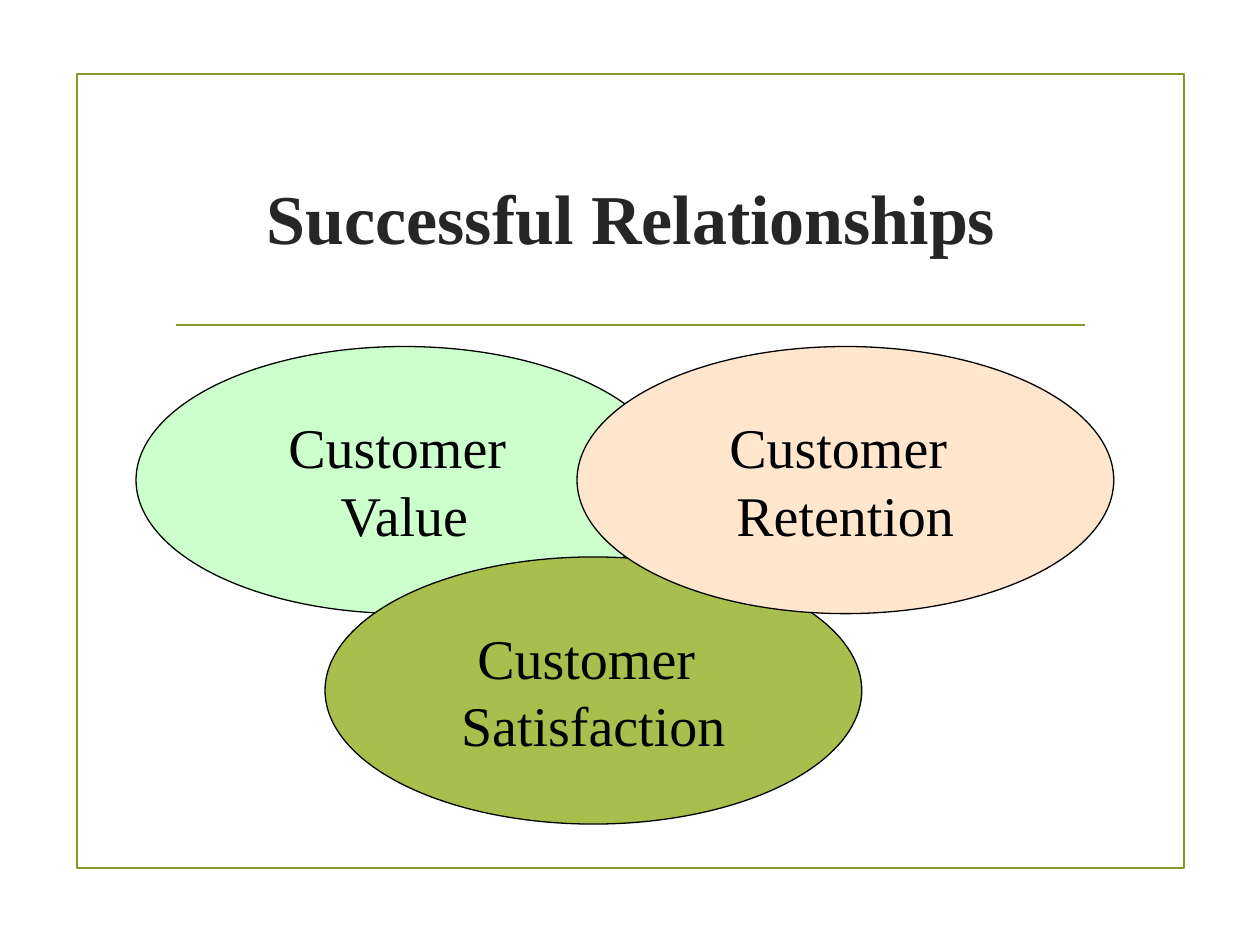
import dataclasses

import pptx
import pptx.dml.color
import pptx.enum.shapes
import pptx.enum.text
import pptx.util
from lxml import etree

SHAPE = pptx.enum.shapes.MSO_SHAPE


@dataclasses.dataclass(frozen=True)
class Theme:
    font: str = "Times New Roman"
    paper: str = "FFFFFF"
    accent: str = "83992A"
    ink: str = "000000"
    heading: str = "262626"
    value: str = "CCFFCC"
    satisfaction: str = "A8BF4D"
    retention: str = "FFE6CD"
    title_size: int = 40
    label_size: int = 32
    rule_width: float = 1.25
    outline_width: float = 0.75


def rgb(color):
    return pptx.dml.color.RGBColor.from_string(color)


def write(tf, text, *, font, size, color, bold=False, wrap=True):
    """Fill a text frame with centred text, one paragraph per line."""
    tf.word_wrap = wrap
    tf.vertical_anchor = pptx.enum.text.MSO_ANCHOR.MIDDLE
    for i, line in enumerate(text.split("\n")):
        p = tf.add_paragraph() if i else tf.paragraphs[0]
        p.alignment = pptx.enum.text.PP_ALIGN.CENTER
        r = p.add_run()
        r.text = line
        r.font.name = font
        r.font.size = pptx.util.Pt(size)
        r.font.bold = bold
        r.font.color.rgb = rgb(color)


class Deck:
    """Places elements on a grid of 100 columns by 75 rows."""

    columns, rows = 100, 75

    def __init__(self, theme):
        self.theme = theme
        self.prs = pptx.Presentation()
        self.prs.slide_width = pptx.util.Inches(10)
        self.prs.slide_height = pptx.util.Inches(7.5)
        self.s = self.prs.slides.add_slide(self.prs.slide_layouts[6])

    def x(self, columns):
        return round(self.prs.slide_width * columns / self.columns)

    def y(self, rows):
        return round(self.prs.slide_height * rows / self.rows)

    def shape(self, kind, col, row, width, height, *, fill=None, line=None, weight=1):
        sp = self.s.shapes.add_shape(
            kind, self.x(col), self.y(row), self.x(width), self.y(height))
        sp.shadow.inherit = False
        if fill:
            sp.fill.solid()
            sp.fill.fore_color.rgb = rgb(fill)
        else:
            sp.fill.background()
        if line:
            sp.line.color.rgb = rgb(line)
            sp.line.width = pptx.util.Pt(weight)
        else:
            sp.line.fill.background()
        return sp

    def frame(self, *box):
        self.shape(SHAPE.RECTANGLE, *box, line=self.theme.accent,
                   weight=self.theme.rule_width)

    def rule(self, left, right, row):
        sp = self.s.shapes.add_connector(
            pptx.enum.shapes.MSO_CONNECTOR.STRAIGHT,
            self.x(left), self.y(row), self.x(right), self.y(row))
        sp.line.color.rgb = rgb(self.theme.accent)
        sp.line.width = pptx.util.Pt(self.theme.rule_width)
        etree.SubElement(sp.element.spPr, pptx.oxml.ns.qn("a:effectLst"))

    def title(self, text, *box):
        t = self.theme
        sp = self.shape(SHAPE.RECTANGLE, *box, fill=t.paper)
        write(sp.text_frame, text, font=t.font, size=t.title_size,
              color=t.heading, bold=True)

    def ellipse(self, text, col, row, fill, width=42.6, height=21.2):
        t = self.theme
        sp = self.shape(SHAPE.OVAL, col, row, width, height, fill=fill,
                        line=t.ink, weight=t.outline_width)
        write(sp.text_frame, text, font=t.font, size=t.label_size,
              color=t.ink, wrap=False)


def main():
    theme = Theme()
    deck = Deck(theme)
    deck.frame(6.1, 5.9, 87.9, 63)
    deck.rule(14, 86.1, 25.8)
    deck.title("Successful Relationships", 12.9, 10, 74.4, 14.3)
    for label, col, row, fill in (
        ("Value", 10.8, 27.5, theme.value),
        ("Satisfaction", 25.8, 44.2, theme.satisfaction),
        ("Retention", 45.8, 27.5, theme.retention),
    ):
        deck.ellipse(f"Customer \n{label}", col, row, fill)
    deck.prs.save("out.pptx")


if __name__ == "__main__":
    main()
